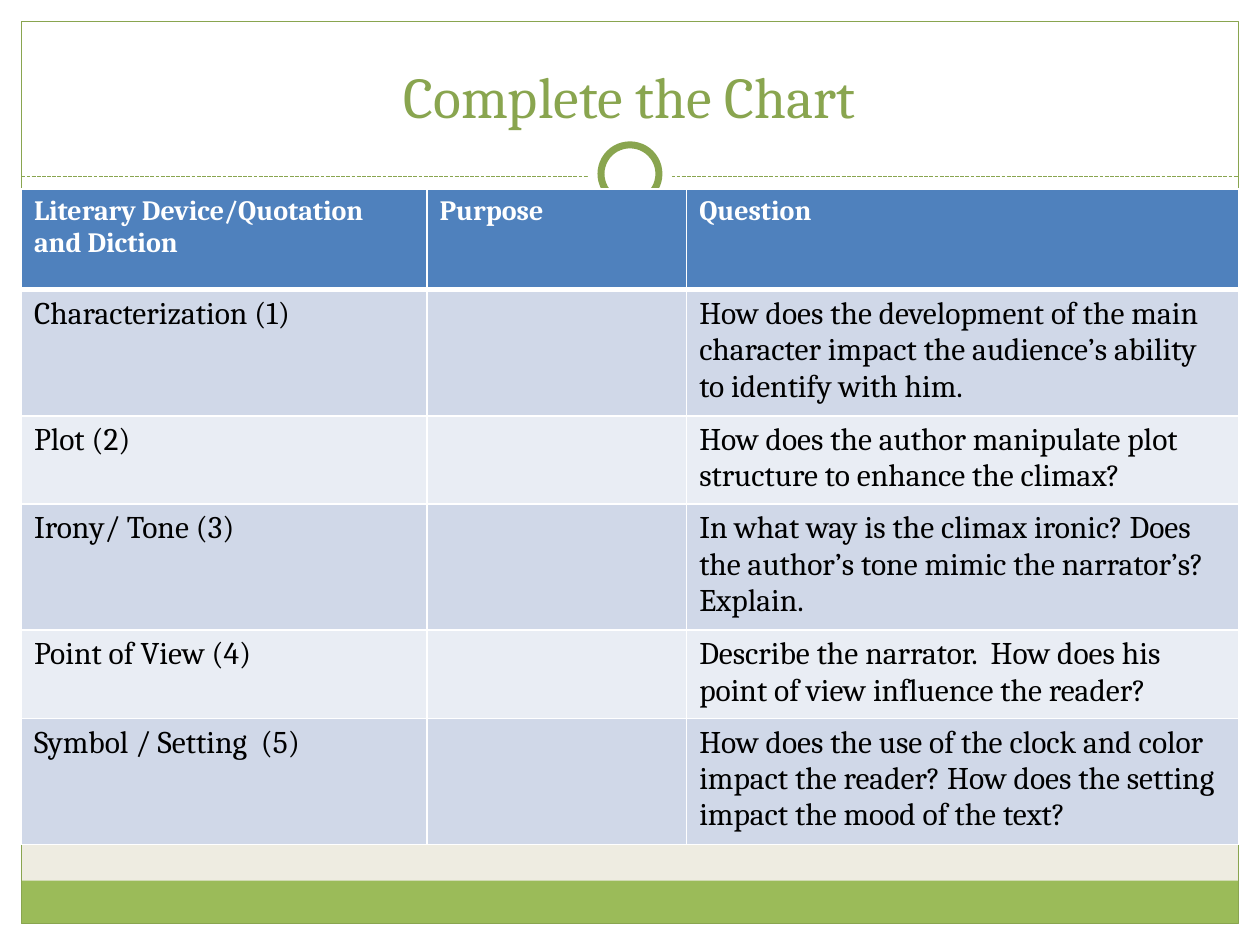
from lxml.etree import SubElement
from pptx import Presentation
from pptx.dml.color import RGBColor
from pptx.enum.dml import MSO_LINE
from pptx.enum.shapes import MSO_CONNECTOR, MSO_SHAPE
from pptx.enum.text import MSO_ANCHOR, PP_ALIGN
from pptx.oxml.ns import qn
from pptx.util import Inches, Pt

WIDTH, HEIGHT, MARGIN = 10, 7.5, 0.17
INNER = WIDTH - 2 * MARGIN
RULE_TOP = 1.4
FONT = "Cambria"
WHITE, GREEN, DARK_GREEN = "FFFFFF", "9BBB59", "89A54F"
HEADER_FILL, BANDS = "4F81BD", ("D0D8E8", "E9EDF4")
TITLE = "Complete the Chart"
HEADINGS = ("Literary Device/Quotation and Diction", "Purpose", "Question")
ROWS = [
    ("Characterization (1)", "", "How does the development of the main character impact "
     "the audience’s ability to identify with him."),
    ("Plot (2)", "", "How does the author manipulate plot structure to enhance the climax?"),
    ("Irony/ Tone (3)", "", "In what way is the climax ironic? Does the author’s tone mimic "
     "the narrator’s? Explain."),
    ("Point of View (4)", "", "Describe the narrator.  How does his point of view influence the reader?"),
    ("Symbol / Setting  (5)", "", "How does the use of the clock and color impact the reader? "
     "How does the setting impact the mood of the text?"),
]
COLUMN_WIDTHS = (3.22, 2.06, 4.38)
ROW_HEIGHTS = (0.8, 0.97, 0.68, 0.97, 0.68, 0.97)
FRAME_BANDS = [
    (0, HEIGHT - MARGIN, WIDTH, MARGIN, WHITE),
    (0, 0, WIDTH, 1.52, WHITE),
    (0, 0, MARGIN, HEIGHT, WHITE),
    (WIDTH - MARGIN, 0, MARGIN, HEIGHT, WHITE),
    (MARGIN, 6.99, INNER, 0.34, GREEN),
]


def color(value):
    return RGBColor.from_string(value)


def add_shape(page, kind, left, top, width, height, fill=None, line=None, weight=0.75):
    shape = page.shapes.add_shape(kind, *map(Inches, (left, top, width, height)))
    shape.shadow.inherit = False
    if fill:
        shape.fill.solid()
        shape.fill.fore_color.rgb = color(fill)
    else:
        shape.fill.background()
    if line:
        shape.line.color.rgb = color(line)
        shape.line.width = Pt(weight)
    else:
        shape.line.fill.background()


def add_circle(page, size, **style):
    add_shape(page, MSO_SHAPE.OVAL, (WIDTH - size) / 2, RULE_TOP - 0.02 - size / 2, size, size, **style)


def style_text(paragraph, size, value, bold=False):
    font = paragraph.font
    font.name, font.size, font.bold = FONT, Pt(size), bold
    font.color.rgb = color(value)


def add_frame(page):
    for *place, fill in FRAME_BANDS:
        add_shape(page, MSO_SHAPE.RECTANGLE, *place, fill=fill)
    add_shape(page, MSO_SHAPE.RECTANGLE, MARGIN, MARGIN, INNER, HEIGHT - 2 * MARGIN, line=DARK_GREEN)
    rule = page.shapes.add_connector(
        MSO_CONNECTOR.STRAIGHT, *map(Inches, (MARGIN, RULE_TOP, WIDTH - MARGIN, RULE_TOP)))
    rule.line.color.rgb = color(DARK_GREEN)
    rule.line.width = Pt(0.75)
    rule.line.dash_style = MSO_LINE.SQUARE_DOT
    SubElement(rule.element.spPr, qn("a:effectLst"))
    add_circle(page, 0.67, fill=WHITE)
    add_circle(page, 0.46, fill=WHITE, line=DARK_GREEN, weight=4)


def add_title(page):
    box = page.shapes.add_textbox(*map(Inches, (0.33, 0.25, 9.33, 0.83)))
    frame = box.text_frame
    frame.word_wrap = True
    frame.vertical_anchor = MSO_ANCHOR.BOTTOM
    frame.text = TITLE
    paragraph = frame.paragraphs[0]
    paragraph.alignment = PP_ALIGN.CENTER
    style_text(paragraph, 33, DARK_GREEN)


def set_borders(cell, weights):
    properties = cell._tc.get_or_add_tcPr()
    for position, (side, weight) in enumerate(weights.items()):
        border = properties.makeelement(qn(f"a:ln{side}"), {"w": str(Pt(weight))})
        fill = SubElement(border, qn("a:solidFill"))
        SubElement(fill, qn("a:srgbClr"), val=WHITE)
        properties.insert(position, border)


def add_chart_table(page):
    place = (MARGIN, 1.5, sum(COLUMN_WIDTHS), sum(ROW_HEIGHTS))
    table = page.shapes.add_table(len(ROW_HEIGHTS), len(COLUMN_WIDTHS), *map(Inches, place)).table
    for column, width in zip(table.columns, COLUMN_WIDTHS):
        column.width = Inches(width)
    for index, texts in enumerate([HEADINGS, *ROWS]):
        header = index == 0
        table.rows[index].height = Inches(ROW_HEIGHTS[index])
        for cell, text in zip(table.rows[index].cells, texts):
            cell.text = text
            style_text(cell.text_frame.paragraphs[0], 16 if header else 18,
                       WHITE if header else "000000", header)
            cell.fill.solid()
            cell.fill.fore_color.rgb = color(HEADER_FILL if header else BANDS[(index - 1) % 2])
            set_borders(cell, {"L": 1, "R": 1, "T": 3 if index == 1 else 1, "B": 3 if header else 1})


def main():
    """Build the literary device chart slide."""
    deck = Presentation()
    deck.slide_width, deck.slide_height = Inches(WIDTH), Inches(HEIGHT)
    page = deck.slides.add_slide(deck.slide_layouts[6])
    page.background.fill.solid()
    page.background.fill.fore_color.rgb = color("EEECE1")
    add_frame(page)
    add_title(page)
    add_chart_table(page)
    deck.save("out.pptx")


if __name__ == "__main__":
    main()
